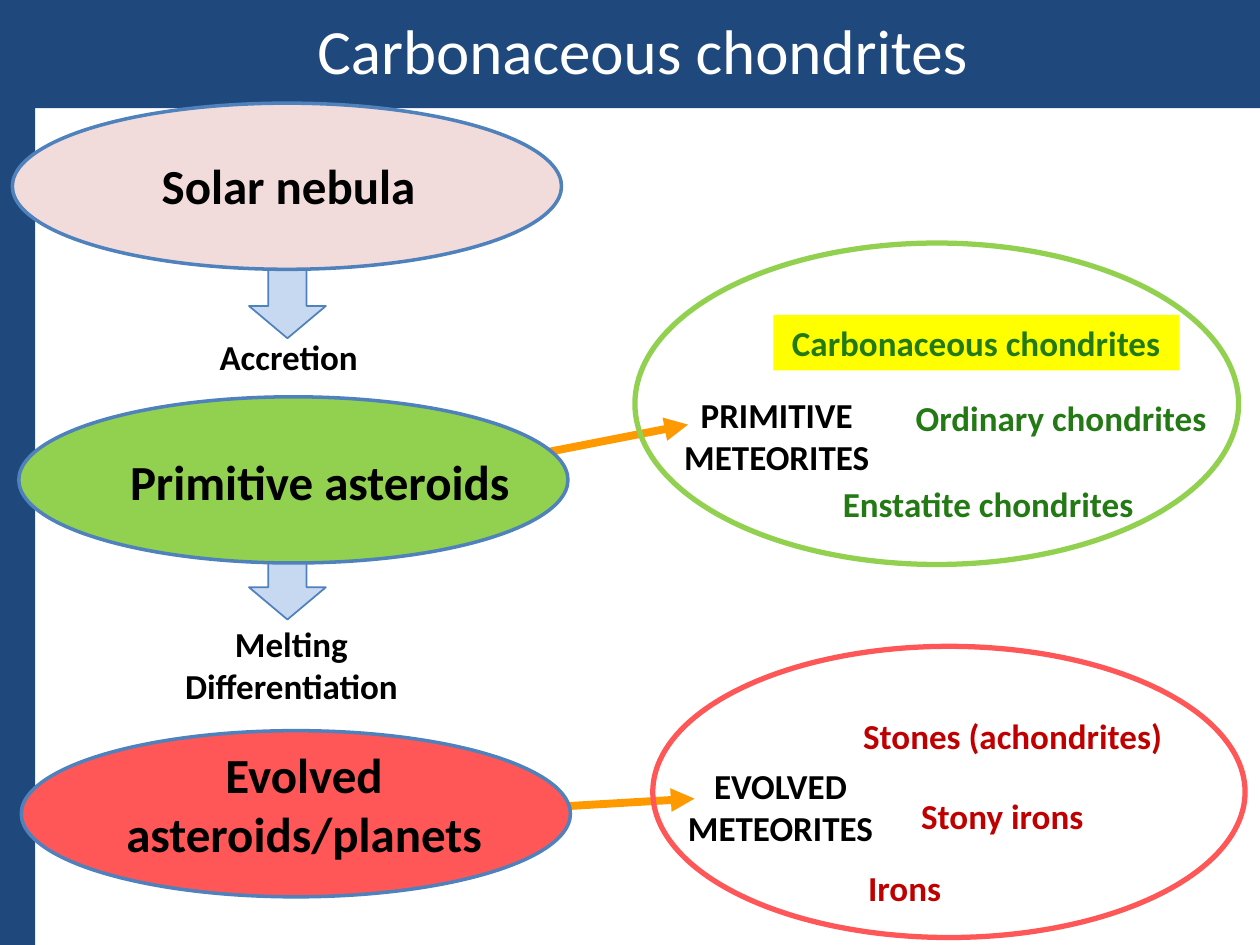
from pptx import Presentation
from pptx.dml.color import RGBColor
from pptx.enum.shapes import MSO_CONNECTOR, MSO_SHAPE
from pptx.enum.text import MSO_ANCHOR, MSO_AUTO_SIZE, PP_ALIGN
from pptx.oxml.ns import qn
from pptx.util import Cm, Pt
from lxml import etree

STRAIGHT = MSO_CONNECTOR.STRAIGHT
RECTANGLE, OVAL, DOWN_ARROW = MSO_SHAPE.RECTANGLE, MSO_SHAPE.OVAL, MSO_SHAPE.DOWN_ARROW
TOP, MIDDLE = MSO_ANCHOR.TOP, MSO_ANCHOR.MIDDLE
LEFT, CENTER = PP_ALIGN.LEFT, PP_ALIGN.CENTER
NO_AUTOFIT = MSO_AUTO_SIZE.NONE

NAVY = RGBColor(0x1F, 0x49, 0x7D)
BLUE = RGBColor(0x4F, 0x81, 0xBD)
PALE_BLUE = RGBColor(0xC6, 0xD9, 0xF1)
PINK = RGBColor(0xF2, 0xDC, 0xDB)
GREEN = RGBColor(0x92, 0xD0, 0x50)
DARK_GREEN = RGBColor(0x23, 0x7A, 0x14)
RED = RGBColor(0xFF, 0x57, 0x57)
DARK_RED = RGBColor(0xC0, 0x00, 0x00)
ORANGE = RGBColor(0xFF, 0x99, 0x00)
YELLOW = RGBColor(0xFF, 0xFF, 0x00)
BLACK = RGBColor(0, 0, 0)
WHITE = RGBColor(0xFF, 0xFF, 0xFF)

PAGE_WIDTH, PAGE_HEIGHT = 25.4, 19.05
STAGE_SIZE = (11.07, 3.35)
ARROW_LEFT, ARROW_SIZE = 5.02, (1.55, 1.63)
LINE_HEIGHT = 1.12

# Arrow top, caption box, caption
STEPS = [
    (5.19, (3.18, 6.63, 5.28, LINE_HEIGHT), "Accretion"),
    (10.86, (2.08, 12.42, 7.59, 1.96), "Melting\nDifferentiation"),
]
# Ellipse corner, fill, label box inside the ellipse, label
STAGES = [
    ((0.25, 2.08), PINK, (1.63, 0.94, 7.87, 1.45), "Solar nebula"),
    ((0.38, 8.0), GREEN, (1.47, 0.97, 9.19, 1.45), "Primitive asteroids"),
    ((0.43, 14.73), RED, (1.04, 0.15, 9.32, 2.64), "Evolved asteroids/planets"),
]
POINTERS = [((8.71, 16.41), (14.0, 16.1)), ((7.37, 9.83), (13.87, 8.56))]
# Ellipse box, outline, item colour, name box, name, items (left, top, width, text, fill)
METEORITE_GROUPS = [
    ((12.8, 4.9, 12.17, 6.48), GREEN, DARK_GREEN,
     (0.69, 2.9, 4.34, 1.96), "PRIMITIVE METEORITES",
     [(2.79, 1.45, 8.18, "Carbonaceous chondrites", YELLOW),
      (5.41, 2.97, 6.53, "Ordinary chondrites", None),
      (3.94, 4.7, 6.73, "Enstatite chondrites", None)]),
    ((13.16, 13.03, 11.94, 5.87), RED, DARK_RED,
     (0.3, 2.26, 4.55, 1.96), "EVOLVED METEORITES",
     [(3.99, 1.24, 6.78, "Stones (achondrites)", None),
      (5.16, 2.87, 4.19, "Stony irons", None),
      (4.09, 4.32, 2.49, "Irons", None)]),
]


def lengths(values):
    return [Cm(value) for value in values]


def inside(box, part):
    """Shift a part given relative to a box onto the page."""
    return (box[0] + part[0], box[1] + part[1], *part[2:])


def write(shape, text, size, color, align=CENTER, anchor=TOP, bold=True):
    frame = shape.text_frame
    frame.word_wrap = True
    frame.auto_size = NO_AUTOFIT
    frame.vertical_anchor = anchor
    frame.text = text
    font_format = {"name": "Calibri", "size": Pt(size), "bold": bold}
    for para in frame.paragraphs:
        para.alignment = align
        for span in para.runs:
            for name, value in font_format.items():
                setattr(span.font, name, value)
            span.font.color.rgb = color


def add_label(page, box, text, size, color=BLACK, align=CENTER, fill=None):
    label = page.shapes.add_textbox(*lengths(box))
    if fill is not None:
        label.fill.solid()
        label.fill.fore_color.rgb = fill
    write(label, text, size, color, align)


def add_figure(page, kind, box, fill=None, outline=None, weight=1):
    figure = page.shapes.add_shape(kind, *lengths(box))
    figure.shadow.inherit = False
    if fill is None:
        figure.fill.background()
    else:
        figure.fill.solid()
        figure.fill.fore_color.rgb = fill
    if outline is None:
        figure.line.fill.background()
    else:
        figure.line.color.rgb = outline
        figure.line.width = Pt(weight)
    return figure


def add_header(page, box):
    """Place the side band and the title bar."""
    add_figure(page, RECTANGLE, (0, 0, 0.71, PAGE_HEIGHT), NAVY)
    title = page.shapes.title
    title.left, title.top, title.width, title.height = lengths(box)
    title.fill.solid()
    title.fill.fore_color.rgb = NAVY
    write(title, "Carbonaceous chondrites", 36, WHITE, anchor=MIDDLE, bold=False)
    title.text_frame.paragraphs[0].line_spacing = 0.9


def add_pointer(page, start, end):
    pointer = page.shapes.add_connector(STRAIGHT, *lengths(start + end))
    pointer.line.color.rgb = ORANGE
    pointer.line.width = Pt(4.5)
    line = pointer.line._get_or_add_ln()
    for tag, kind in (("a:headEnd", "oval"), ("a:tailEnd", "triangle")):
        etree.SubElement(line, qn(tag), type=kind)
    etree.SubElement(pointer._element.spPr, qn("a:effectLst"))


def add_step(page, arrow_top, caption_box, caption):
    arrow_box = (ARROW_LEFT, arrow_top, *ARROW_SIZE)
    arrow = add_figure(page, DOWN_ARROW, arrow_box, PALE_BLUE, BLUE)
    arrow.adjustments[0] = 0.5
    arrow.adjustments[1] = 0.42
    add_label(page, caption_box, caption, 20)


def add_stage(page, corner, fill, label_box, label):
    add_figure(page, OVAL, corner + STAGE_SIZE, fill, BLUE, 2)
    add_label(page, inside(corner, label_box), label, 28)


def add_meteorite_group(page, box, outline, color, name_box, name, items):
    add_label(page, inside(box, name_box), name, 20)
    add_figure(page, OVAL, box, outline=outline, weight=3)
    for left, top, width, text, fill in items:
        item_box = inside(box, (left, top, width, LINE_HEIGHT))
        align = LEFT if fill is None else CENTER
        add_label(page, item_box, text, 20, color, align, fill)


def main():
    deck = Presentation()
    deck.slide_width, deck.slide_height = lengths((PAGE_WIDTH, PAGE_HEIGHT))
    page = deck.slides.add_slide(deck.slide_layouts[5])
    add_header(page, (0.51, 0, 24.89, 2.18))
    for pointer in POINTERS:
        add_pointer(page, *pointer)
    for step in STEPS:
        add_step(page, *step)
    for group in METEORITE_GROUPS:
        add_meteorite_group(page, *group)
    for stage in STAGES:
        add_stage(page, *stage)
    deck.save("out.pptx")


if __name__ == "__main__":
    main()
